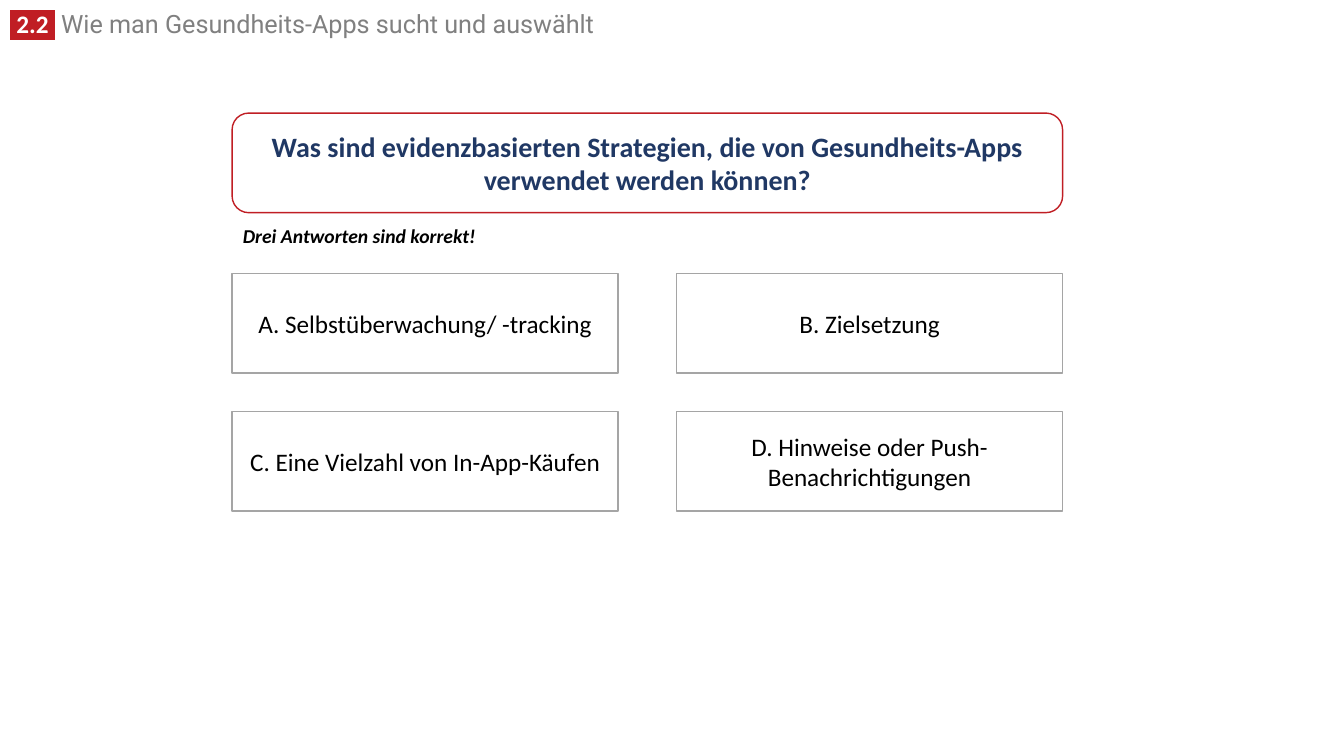
from lxml.etree import SubElement
from pptx import Presentation
from pptx.dml.color import RGBColor
from pptx.enum.shapes import MSO_SHAPE
from pptx.enum.text import MSO_ANCHOR, MSO_AUTO_SIZE, PP_ALIGN
from pptx.oxml.ns import qn
from pptx.util import Cm, Pt

RED = "C01E24"
NAVY = "203864"
GREY = "808080"
BORDER = "A5A5A5"
BLACK = "000000"
WHITE = "FFFFFF"


def colour(value):
    return RGBColor.from_string(value)


def add_text(paragraph, text, size=18, font="Calibri", color=BLACK,
             bold=False, italic=False, highlight=None):
    run = paragraph.add_run()
    run.text = text
    run.font.size = Pt(size)
    run.font.bold = bold
    run.font.italic = italic
    run.font.color.rgb = colour(color)
    if highlight:
        properties = run.font.fill._xPr
        marker = SubElement(properties, qn("a:highlight"))
        SubElement(marker, qn("a:srgbClr"), val=highlight)
    run.font.name = font


class QuizSlide:
    def __init__(self, presentation):
        self.slide = presentation.slides.add_slide(presentation.slide_layouts[5])

    def title(self, number, text):
        shape = self.slide.shapes.title
        shape.left, shape.top, shape.width, shape.height = Cm(0), Cm(0.23), Cm(24.18), Cm(0.89)
        frame = shape.text_frame
        frame.auto_size = MSO_AUTO_SIZE.SHAPE_TO_FIT_TEXT
        frame.vertical_anchor = MSO_ANCHOR.TOP
        paragraph = frame.paragraphs[0]
        paragraph.alignment = PP_ALIGN.LEFT
        paragraph.line_spacing = 0.8
        for part, font in ((" ", "Roboto"), (number, "Calibri"), (" ", "Roboto")):
            add_text(paragraph, part, font=font, color=WHITE, bold=True, highlight=RED)
        add_text(paragraph, " " + text, font="Roboto", color=GREY)

    def box(self, kind, left, top, width, text, border, **text_format):
        shape = self.slide.shapes.add_shape(kind, Cm(left), Cm(top), Cm(width), Cm(2.51))
        shape.shadow.inherit = False
        shape.fill.solid()
        shape.fill.fore_color.rgb = colour(WHITE)
        shape.line.color.rgb = colour(border)
        shape.line.width = Pt(1)
        frame = shape.text_frame
        frame.word_wrap = True
        frame.vertical_anchor = MSO_ANCHOR.MIDDLE
        paragraph = frame.paragraphs[0]
        paragraph.alignment = PP_ALIGN.CENTER
        add_text(paragraph, text, **text_format)

    def note(self, left, top, width, height, text):
        shape = self.slide.shapes.add_textbox(Cm(left), Cm(top), Cm(width), Cm(height))
        frame = shape.text_frame
        frame.word_wrap = False
        frame.auto_size = MSO_AUTO_SIZE.SHAPE_TO_FIT_TEXT
        add_text(frame.paragraphs[0], text, size=14, bold=True, italic=True)


def main():
    presentation = Presentation()
    presentation.slide_width = Cm(33.87)
    presentation.slide_height = Cm(19.05)

    quiz = QuizSlide(presentation)
    quiz.title("2.2", "Wie man Gesundheits-Apps sucht und auswählt")
    quiz.box(MSO_SHAPE.ROUNDED_RECTANGLE, 5.85, 2.85, 20.93,
             "Was sind evidenzbasierten Strategien, die von Gesundheits-Apps "
             "verwendet werden können?", RED, size=20, color=NAVY, bold=True)
    quiz.note(5.87, 5.51, 6.43, 0.86, "Drei Antworten sind korrekt!")

    answers = ("A. Selbstüberwachung/ -tracking", "B. Zielsetzung",
               "C. Eine Vielzahl von In-App-Käufen",
               "D. Hinweise oder Push-Benachrichtigungen")
    for index, answer in enumerate(answers):
        row, column = divmod(index, 2)
        quiz.box(MSO_SHAPE.RECTANGLE, 5.85 + column * 11.2, 6.89 + row * 3.48,
                 9.73, answer, BORDER)

    presentation.save("out.pptx")


if __name__ == "__main__":
    main()
